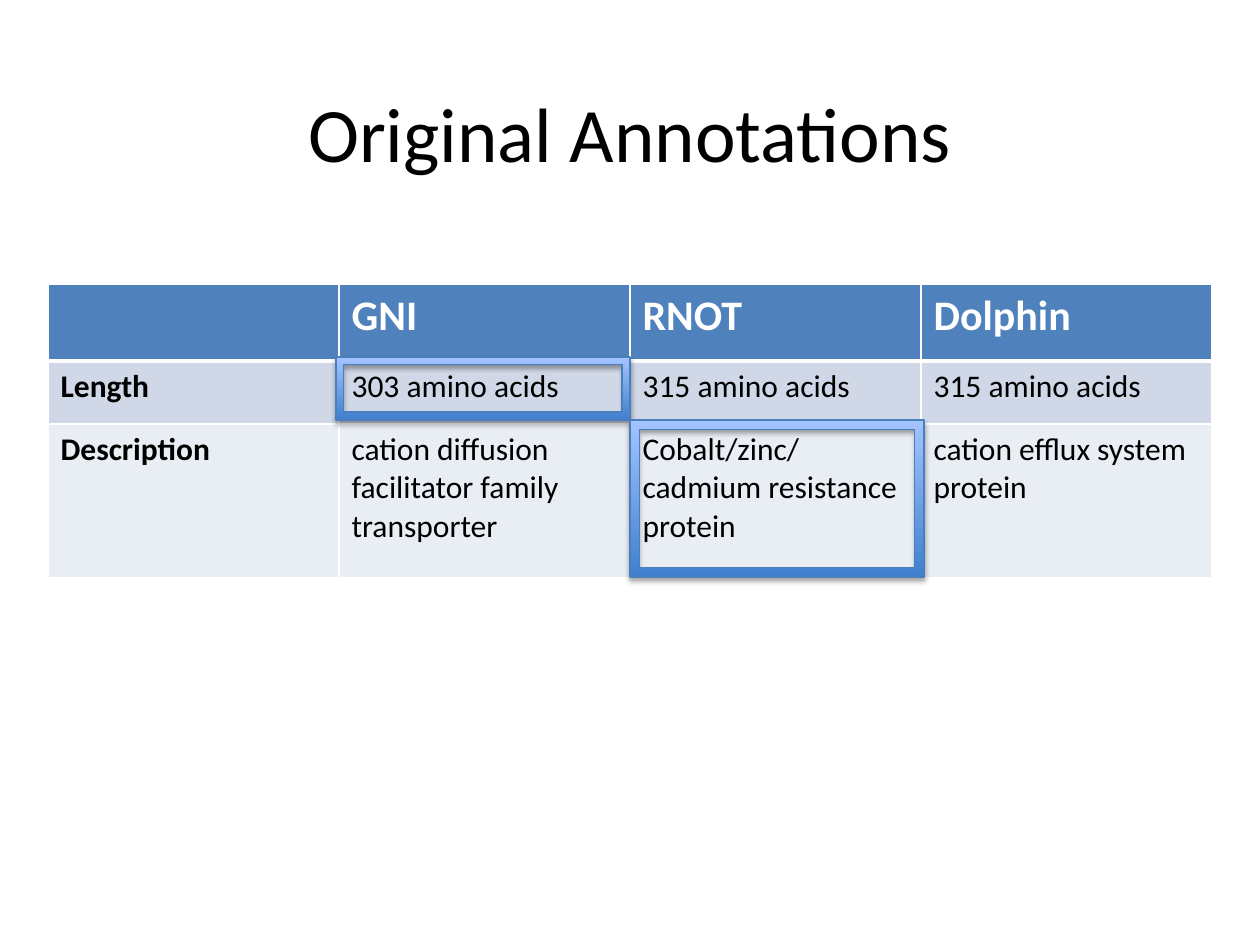
from lxml.etree import SubElement
from pptx import Presentation
from pptx.dml.color import RGBColor
from pptx.enum.shapes import MSO_SHAPE
from pptx.enum.text import MSO_ANCHOR, PP_ALIGN
from pptx.oxml import parse_xml
from pptx.oxml.ns import nsdecls, qn
from pptx.util import Emu, Pt

COLORS = {
    "text": "000000", "white": "FFFFFF", "header": "4F81BD",
    "band_dark": "D0D8E8", "band_light": "E9EDF4",
    "frame_dark": "3F80CE", "frame_light": "A4C4FF", "frame_line": "4B7EBC",
}


def px(n):
    return Emu(round(n * 914400 / 126))


def rgb(name):
    return RGBColor.from_string(COLORS[name])


class Deck:
    """Holds the style and the current slide, and adds each kind of element."""

    font = "Calibri"

    def __init__(self, width, height):
        self.prs = Presentation()
        self.prs.slide_width, self.prs.slide_height = px(width), px(height)
        self.slide = self.prs.slides.add_slide(self.prs.slide_layouts[5])

    def place(self, sp, x, y, w, h):
        sp.left, sp.top, sp.width, sp.height = px(x), px(y), px(w), px(h)

    def style(self, p, size, color, bold=False):
        p.font.name, p.font.size, p.font.bold = self.font, Pt(size), bold
        p.font.color.rgb = rgb(color)

    def title(self, text, x, y, w, h):
        sp = self.slide.shapes.title
        self.place(sp, x, y, w, h)
        tf = sp.text_frame
        tf.text = text
        tf.vertical_anchor = MSO_ANCHOR.MIDDLE
        p = tf.paragraphs[0]
        p.alignment = PP_ALIGN.CENTER
        self.style(p, 44, "text")

    def borders(self, cell, widths):
        tcPr = cell._tc.get_or_add_tcPr()
        for i, (side, width) in enumerate(widths.items()):
            tcPr.insert(i, parse_xml(
                f'<a:ln{side} {nsdecls("a")} w="{Pt(width)}"><a:solidFill>'
                f'<a:srgbClr val="{COLORS["white"]}"/></a:solidFill></a:ln{side}>'))

    def table(self, rows, x, y, col_width, heights):
        cols = len(rows[0])
        table = self.slide.shapes.add_table(
            len(rows), cols, px(x), px(y), px(col_width * cols), px(sum(heights))).table
        for column in table.columns:
            column.width = px(col_width)
        fills = ("header", "band_dark", "band_light")
        for i, (values, height, fill) in enumerate(zip(rows, heights, fills)):
            table.rows[i].height = px(height)
            for j, value in enumerate(values):
                cell = table.cell(i, j)
                cell.text = value
                cell.fill.solid()
                cell.fill.fore_color.rgb = rgb(fill)
                size, color = (18, "text") if i else (24, "white")
                self.style(cell.text_frame.paragraphs[0], size, color, i == 0 or j == 0)
                self.borders(cell, {"L": 1, "R": 1, "T": 3 if i == 1 else 1,
                                    "B": 1 if i else 3})

    def frame(self, x, y, w, h, thickness):
        sp = self.slide.shapes.add_shape(MSO_SHAPE.FRAME, px(x), px(y), px(w), px(h))
        sp.adjustments[0] = thickness
        sp.fill.gradient()
        sp.fill.gradient_angle = 90
        for stop, name in zip(sp.fill.gradient_stops, ("frame_dark", "frame_light")):
            stop.color.rgb = rgb(name)
        sp.line.color.rgb = rgb("frame_line")
        sp.line.width = Pt(0.75)
        sp.shadow.inherit = False
        effects = sp._element.spPr.find(qn("a:effectLst"))
        shadow = SubElement(effects, qn("a:outerShdw"), blurRad=str(Pt(3.1)),
                            dist=str(Pt(1.8)), dir="5400000", rotWithShape="0")
        color = SubElement(shadow, qn("a:srgbClr"), val=COLORS["text"])
        SubElement(color, qn("a:alpha"), val="35000")


def main():
    s = Deck(1260, 945)
    s.title("Original Annotations", 63, 53, 1134, 157)
    s.table([
        ("", "GNI", "RNOT", "Dolphin"),
        ("Length", "303 amino acids", "315 amino acids", "315 amino acids"),
        ("Description", "cation diffusion facilitator family transporter",
         "Cobalt/zinc/cadmium resistance protein", "cation efflux system protein"),
    ], 48, 284, 291, (77, 63, 154))
    s.frame(336, 357, 294, 63, 0.125)
    s.frame(630, 420, 294, 157, 0.06)
    s.prs.save("out.pptx")


if __name__ == "__main__":
    main()
